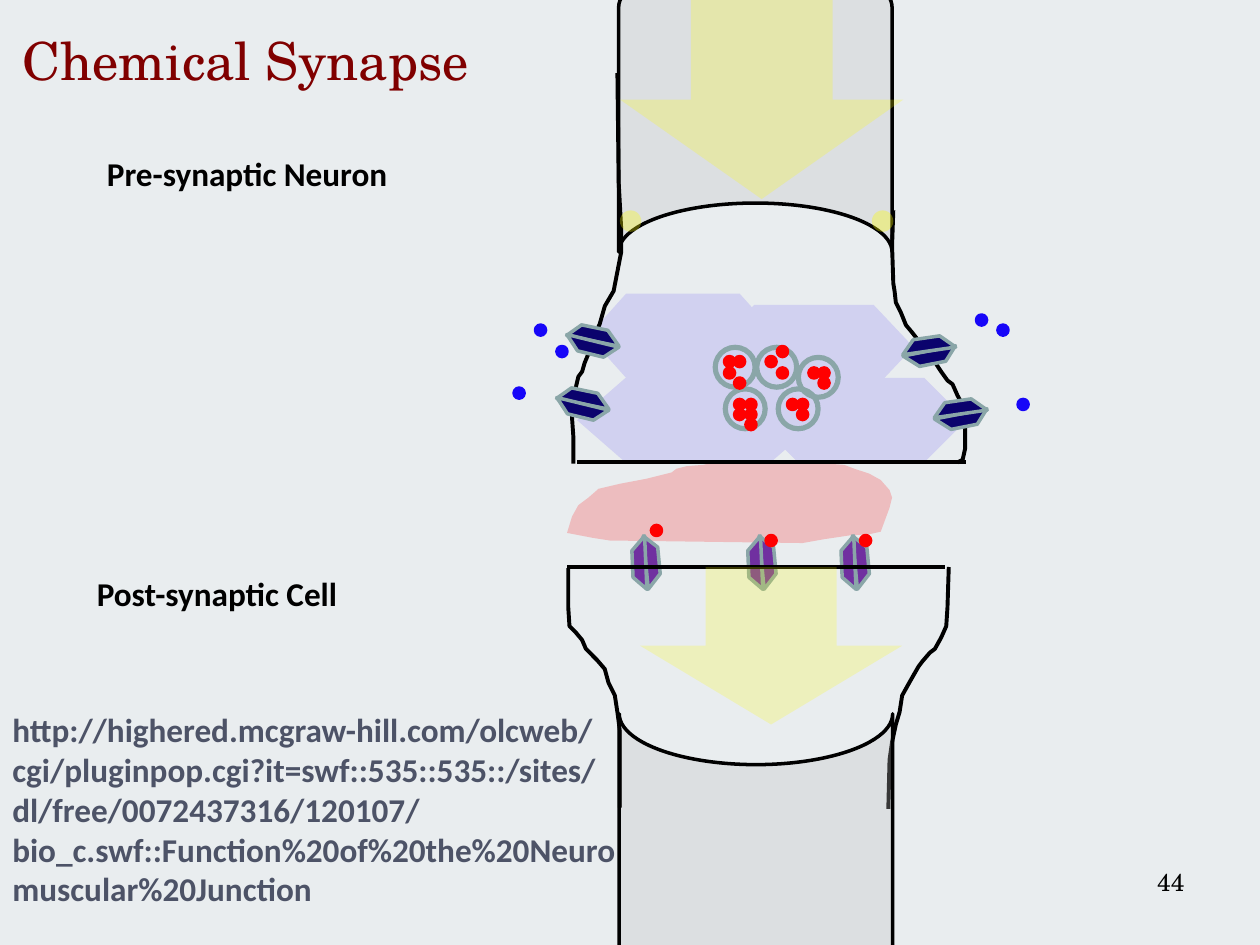
from lxml import etree
from pptx import Presentation
from pptx import util as u
from pptx.dml.color import RGBColor
from pptx.enum import shapes, text
from pptx.oxml.ns import qn

COLORS = {
    "background": "E9EDEF", "cytoplasm": "D1D1F0", "axon": "BFBFBF", "black": "000000",
    "channel": "0B036D", "receptor": "7030A0", "rim": "8AA6A8", "vesicle": "BBE0E3",
    "signal": "FFFF00", "transmitter": "FF0000", "ion": "1706F8",
    "title": "800000", "address": "4D5367",
}
INCH = 2.54
PRESET = shapes.MSO_SHAPE


def paint(shape, fill=None, line=None, width=2, alpha=100):
    shape.shadow.inherit = False
    if fill:
        shape.fill.solid()
        shape.fill.fore_color.rgb = RGBColor.from_string(COLORS[fill])
        if alpha < 100:
            color = shape.fill._xPr.find(qn("a:solidFill"))[0]
            etree.SubElement(color, qn("a:alpha"), val=str(alpha * 1000))
    else:
        shape.fill.background()
    if line:
        shape.line.color.rgb = RGBColor.from_string(COLORS[line])
        shape.line.width = u.Pt(width)
    else:
        shape.line.fill.background()


def draw(preset, left, top, width, height, fill, line=None, alpha=100, turn=0):
    box = [u.Cm(value * INCH) for value in (left, top, width, height)]
    shape = page.shapes.add_shape(preset, *box)
    shape.rotation = turn
    paint(shape, fill, line, 2, alpha)
    return shape


deck = Presentation()
deck.slide_width, deck.slide_height = u.Cm(10 * INCH), u.Cm(7.5 * INCH)
page = deck.slides.add_slide(deck.slide_layouts[5])
page.background.fill.solid()
page.background.fill.fore_color.rgb = RGBColor.from_string(COLORS["background"])

for left, top, width in [(6, 3, 1.67), (5.67, 2.42, 1.58), (4.58, 3, 1.92), (4.67, 2.33, 1.5)]:
    draw(PRESET.FLOWCHART_PREPARATION, left, top, width, 0.67, "cytoplasm")

draw(PRESET.FLOWCHART_STORED_DATA, 4.83, -0.25, 2.33, 2.17, "axon", "black", 29, 90)

walls = [
    [(7.6, 3.67), (7.64, 3.65), (7.66, 3.56), (7.66, 3.4), (7.65, 3.23), (7.6, 3.14),
     (7.56, 3.05), (7.52, 3.02), (7.47, 2.95), (7.45, 2.92), (7.4, 2.84), (7.33, 2.77),
     (7.31, 2.73), (7.24, 2.64), (7.19, 2.58), (7.15, 2.48), (7.11, 2.4), (7.1, 2.31),
     (7.09, 2.25), (7.08, 1.95), (7.09, 1.67)],
    [(4.55, 3.68), (4.55, 3.46), (4.54, 3.32), (4.55, 3.16), (4.59, 2.99), (4.62, 2.95),
     (4.64, 2.88), (4.69, 2.76), (4.71, 2.69), (4.73, 2.64), (4.76, 2.57), (4.8, 2.43),
     (4.87, 2.31), (4.93, 2), (4.93, 1.82), (4.91, 1.45), (4.9, 0.58)],
    [(7.53, 4.5), (7.52, 4.82), (7.51, 4.97), (7.47, 5.06), (7.42, 5.15), (7.38, 5.18),
     (7.32, 5.25), (7.29, 5.29), (7.25, 5.36), (7.21, 5.43), (7.16, 5.52), (7.14, 5.65),
     (7.11, 5.75), (7.08, 5.89), (7.06, 6.03), (7.05, 6.42)],
    [(4.51, 4.51), (4.51, 4.82), (4.52, 4.97), (4.57, 5.02), (4.62, 5.08), (4.65, 5.15),
     (4.74, 5.24), (4.8, 5.31), (4.83, 5.42), (4.88, 5.52), (4.9, 5.65), (4.92, 5.8),
     (4.92, 6.41)],
]
for wall in walls:
    points = [(u.Cm(x * INCH), u.Cm(y * INCH)) for x, y in wall]
    builder = page.shapes.build_freeform(*points[0])
    builder.add_line_segments(points[1:], close=False)
    paint(builder.convert_to_shape(), line="black", width=2.25)

for left, top in [(6.33, 2.83), (5.75, 3.08), (5.67, 2.75), (6, 2.75)]:
    vesicle = draw(PRESET.DONUT, left, top, 0.33, 0.33, "vesicle", "rim")
    vesicle.adjustments[0] = 0.04

for left, alpha in [(6.92, 34), (4.92, 31)]:
    draw(PRESET.FLOWCHART_CONNECTOR, left, 1.67, 0.17, 0.17, "signal", alpha=alpha)

for left, top, turns in [(4.55, 2.56, (54.8, 236.8)), (4.47, 3.06, (54.8, 236.8)),
                         (7.22, 2.64, (212, 34.9)), (7.47, 3.14, (212, 34.9))]:
    for turn in turns:
        draw(PRESET.DIAGONAL_STRIPE, left, top, 0.31, 0.29, "channel", "rim", turn=turn)

for left, top in [(6.5, 2.92), (6.5, 3), (6.42, 2.92), (6.17, 2.75), (6.17, 2.92),
                  (6.08, 2.83), (5.92, 3.17), (5.92, 3.33), (5.83, 3.17), (5.83, 2.83),
                  (5.83, 3), (5.75, 2.83), (5.92, 3.25), (5.83, 3.25), (5.75, 2.92)]:
    draw(PRESET.FLOWCHART_CONNECTOR, left, top, 0.08, 0.08, "transmitter", "transmitter")

vesicle = draw(PRESET.DONUT, 6.17, 3.08, 0.33, 0.33, "vesicle", "rim")
vesicle.adjustments[0] = 0.04
contents = [draw(PRESET.FLOWCHART_CONNECTOR, left, top, 0.08, 0.08, "transmitter", "transmitter")
            for left, top in [(6.33, 3.25), (6.25, 3.17), (6.33, 3.17)]]
page.shapes.add_group_shape([vesicle, *contents])

for left, top in [(7.75, 2.5), (8.08, 3.17), (7.92, 2.58), (4.25, 2.58), (4.42, 2.75), (4.08, 3.08)]:
    draw(PRESET.FLOWCHART_CONNECTOR, left, top, 0.08, 0.08, "ion", "ion")

cloud = [(5.66, 3.67), (6.57, 3.68), (6.7, 3.69), (6.78, 3.72), (6.9, 3.76), (6.99, 3.81),
         (7.06, 3.89), (7.08, 3.95), (7.06, 4.03), (6.99, 4.22), (6.9, 4.24), (6.74, 4.25),
         (6.54, 4.28), (6.37, 4.31), (4.84, 4.29), (4.71, 4.27), (4.5, 4.23), (4.54, 4.1),
         (4.59, 4.01), (4.67, 3.95), (4.75, 3.88), (4.92, 3.84), (5.13, 3.8), (5.33, 3.75),
         (5.37, 3.72), (5.45, 3.7), (5.58, 3.69)]
points = [(u.Cm(x * INCH), u.Cm(y * INCH)) for x, y in cloud]
builder = page.shapes.build_freeform(*points[0])
builder.add_line_segments(points[1:], close=True)
paint(builder.convert_to_shape(), "transmitter", alpha=20)

for left in (6.63, 5.89, 4.97):
    for turn in (127.7, 310.6):
        draw(PRESET.DIAGONAL_STRIPE, left, 4.32, 0.31, 0.29, "receptor", "rim", turn=turn)

for left, top in [(6.83, 4.25), (6.08, 4.25), (5.17, 4.17)]:
    draw(PRESET.FLOWCHART_CONNECTOR, left, top, 0.08, 0.08, "transmitter", "transmitter")

draw(PRESET.FLOWCHART_STORED_DATA, 4.79, 5.79, 2.42, 2.17, "axon", "black", 29, 270)

for start, end, level in [(4.58, 7.67, 3.67), (4.5, 7.5, 4.5)]:
    membrane = page.shapes.add_connector(
        shapes.MSO_CONNECTOR.STRAIGHT, u.Cm(start * INCH), u.Cm(level * INCH),
        u.Cm(end * INCH), u.Cm(level * INCH))
    membrane.line.color.rgb = RGBColor.from_string(COLORS["black"])
    membrane.line.width = u.Pt(2.25)
    etree.SubElement(membrane._element.spPr, qn("a:effectLst"))

draw(PRESET.DOWN_ARROW, 4.92, 0, 2.25, 1.58, "signal", alpha=23)
draw(PRESET.DOWN_ARROW, 5.08, 4.5, 2.08, 1.25, "signal", alpha=21)

address = ("http://highered.mcgraw-hill.com/olcweb/cgi/pluginpop.cgi?it=swf::535::535::"
           "/sites/dl/free/0072437316/120107/bio_c.swf::Function%20of%20the%20Neuromuscular%20Junction")
labels = [
    ("Chemical Synapse", 0.08, 0.17, 4.67, 0.61, 30, "TeX Gyre Schola", "title", False),
    ("Pre-synaptic Neuron", 0.75, 1.17, 3.08, 0.42, 19, "Calibri", "black", True),
    ("Post-synaptic Cell", 0.67, 4.5, 2.83, 0.42, 19, "Calibri", "black", True),
    (address, 0, 5.58, 5, 1.7, 19, "Calibri", "address", True),
    ("44", 7.17, 6.83, 2.33, 0.52, 14, "TeX Gyre Schola", "black", False),
]
for words, left, top, width, height, size, font, color, bold in labels:
    place = [u.Cm(value * INCH) for value in (left, top, width, height)]
    if color == "title":
        box = page.shapes.title
        box.left, box.top, box.width, box.height = place
    else:
        box = page.shapes.add_textbox(*place)
    frame = box.text_frame
    frame.text = words
    frame.word_wrap = True
    frame.auto_size = text.MSO_AUTO_SIZE.NONE
    frame.vertical_anchor = text.MSO_ANCHOR.TOP
    para = frame.paragraphs[0]
    para.alignment = text.PP_ALIGN.RIGHT if words == "44" else text.PP_ALIGN.LEFT
    span = para.runs[0]
    span.font.size = u.Pt(size)
    span.font.name = font
    span.font.bold = bold
    span.font.color.rgb = RGBColor.from_string(COLORS[color])

deck.save("out.pptx")
